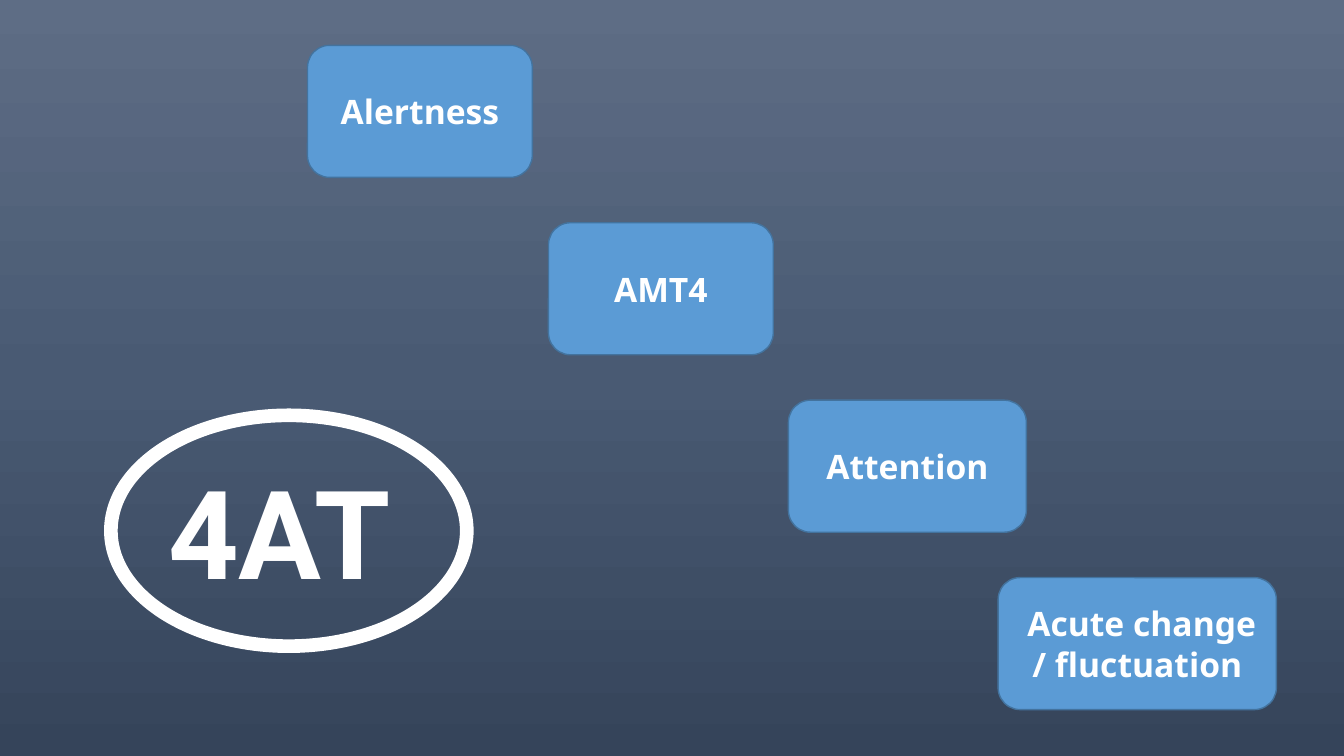
"""Build the 4AT slide with its four test items stepping down to the right."""
from copy import deepcopy

from pptx import Presentation
from pptx.dml.color import RGBColor
from pptx.enum.shapes import MSO_SHAPE as Shape
from pptx.enum.text import MSO_ANCHOR as Anchor, PP_ALIGN as Align
from pptx.oxml.ns import qn
from pptx.util import Inches, Pt

TEST_NAME = "4AT"
ITEMS = [
    ("Alertness", 3.05, 2.23),
    ("AMT4", 5.44, 2.23),
    ("Attention", 7.82, 2.36),
    (" Acute change / fluctuation", 9.9, 2.76),
]
BACKDROP = [(0, "5E6D85"), (0.5, "495A73"), (1, "35445A")]
WHITE, ITEM_FILL, ITEM_LINE = "FFFFFF", "5B9BD5", "43739E"
FIRST_TOP, STEP, ITEM_HEIGHT = 0.45, 1.76, 1.31


def color(hex_value):
    return RGBColor.from_string(hex_value)


def outline(shape, hex_value, width):
    shape.shadow.inherit = False
    shape.line.color.rgb = color(hex_value)
    shape.line.width = Pt(width)


def write(paragraph, text, font_name, size):
    run = paragraph.add_run()
    run.text = text
    run.font.name = font_name
    run.font.size = Pt(size)
    run.font.bold = True
    run.font.color.rgb = color(WHITE)


def paint_backdrop(slide):
    fill = slide.background.fill
    fill.gradient()
    fill.gradient_angle = 270
    stop_list = slide.element.find(".//" + qn("a:gsLst"))
    stop_list.append(deepcopy(stop_list[-1]))
    for stop, (position, hex_value) in zip(fill.gradient_stops, BACKDROP):
        stop.position = position
        stop.color.rgb = color(hex_value)


def add_badge(slide):
    badge = slide.shapes.add_group_shape()
    ring = badge.shapes.add_shape(
        Shape.OVAL, Inches(1.1), Inches(4.12), Inches(3.53), Inches(2.29))
    ring.fill.background()
    outline(ring, WHITE, 9.75)
    label = badge.shapes.add_textbox(
        Inches(1.57), Inches(4.48), Inches(2.59), Inches(1.58))
    label.text_frame.word_wrap = False
    write(label.text_frame.paragraphs[0], TEST_NAME, "Roboto", 88)


def add_item(slide, text, left, top, width):
    item = slide.shapes.add_shape(
        Shape.ROUNDED_RECTANGLE,
        Inches(left), Inches(top), Inches(width), Inches(ITEM_HEIGHT))
    item.fill.solid()
    item.fill.fore_color.rgb = color(ITEM_FILL)
    outline(item, ITEM_LINE, 1)
    frame = item.text_frame
    frame.word_wrap = True
    frame.vertical_anchor = Anchor.MIDDLE
    frame.paragraphs[0].alignment = Align.CENTER
    write(frame.paragraphs[0], text, "Noto Sans", 24)


def main():
    deck = Presentation()
    deck.slide_width, deck.slide_height = Inches(13.33), Inches(7.5)
    slide = deck.slides.add_slide(deck.slide_layouts[6])
    paint_backdrop(slide)
    add_badge(slide)
    for row, (text, left, width) in enumerate(ITEMS):
        add_item(slide, text, left, FIRST_TOP + row * STEP, width)
    deck.save("out.pptx")


if __name__ == "__main__":
    main()
